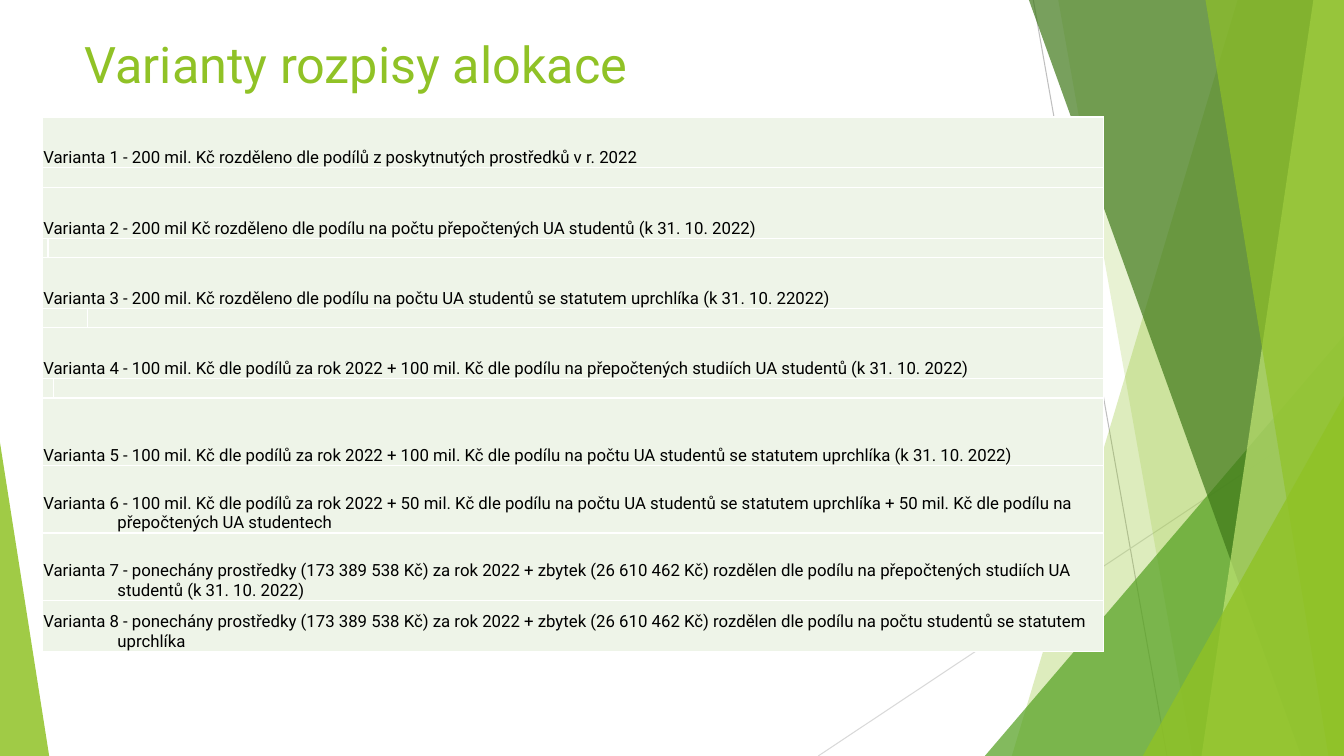
"""Build the slide listing the allocation variants."""
from dataclasses import dataclass

from lxml.etree import SubElement
from pptx import Presentation
from pptx.dml.color import RGBColor
from pptx.enum.shapes import MSO_CONNECTOR, MSO_SHAPE
from pptx.enum.text import MSO_ANCHOR
from pptx.oxml.ns import qn
from pptx.util import Cm, Pt

LIME = RGBColor(0x90, 0xC2, 0x26)
GREEN = RGBColor(0x54, 0xA0, 0x21)
DARK_GREEN = RGBColor(0x3F, 0x78, 0x19)
PALE_LIME = RGBColor(0xC0, 0xE4, 0x74)
CELL_GREEN = RGBColor(0xEE, 0xF4, 0xE8)
GREY = RGBColor(0xBF, 0xBF, 0xBF)
LIGHT_GREY = RGBColor(0xD9, 0xD9, 0xD9)
WHITE = RGBColor(0xFF, 0xFF, 0xFF)
BLACK = RGBColor(0, 0, 0)

TITLE_FORMAT = {"name": "Roboto", "size": Pt(36)}
CELL_FORMAT = {"name": "Roboto", "size": Pt(12)}
CELL_LAYOUT = {
    "vertical_anchor": MSO_ANCHOR.BOTTOM,
    "margin_left": Cm(0.02),
    "margin_right": Cm(0.02),
    "margin_top": Cm(0.02),
    "margin_bottom": 0,
}
COLUMN_WIDTHS = (0.12, 0.1, 0.86, 25.6)
TEXT_ROW, GAP_ROW, TALL_ROW = 1.28, 0.49, 1.7
CONTINUATION_INDENT = Cm(1.87)

# Each row: height, first columns of its merged cells, lines of text.
ROWS = (
    (TEXT_ROW, (0,), ("Varianta 1 - 200 mil. Kč rozděleno dle podílů z poskytnutých prostředků v r. 2022",)),
    (GAP_ROW, (0,), ()),
    (TEXT_ROW, (0,), ("Varianta 2 - 200 mil Kč rozděleno dle podílu na počtu přepočtených UA studentů (k 31. 10. 2022)",)),
    (GAP_ROW, (0, 1), ()),
    (TEXT_ROW, (0,), ("Varianta 3 - 200 mil. Kč rozděleno dle podílu na počtu UA studentů se statutem uprchlíka (k 31. 10. 22022)",)),
    (GAP_ROW, (0, 3), ()),
    (TEXT_ROW, (0,), ("Varianta 4 - 100 mil. Kč dle podílů za rok 2022 + 100 mil. Kč dle podílu na přepočtených studiích UA studentů (k 31. 10. 2022)",)),
    (GAP_ROW, (0, 2), ()),
    (TALL_ROW, (0,), ("Varianta 5 - 100 mil. Kč dle podílů za rok 2022 + 100 mil. Kč dle podílu na počtu UA studentů se statutem uprchlíka (k 31. 10. 2022)",)),
    (TALL_ROW, (0,), (
        "Varianta 6 - 100 mil. Kč dle podílů za rok 2022 + 50 mil. Kč dle podílu na počtu UA studentů se statutem uprchlíka + 50 mil. Kč dle podílu na",
        "přepočtených UA studentech")),
    (TALL_ROW, (0,), (
        "Varianta 7 - ponechány prostředky (173 389 538 Kč) za rok 2022 + zbytek (26 610 462 Kč) rozdělen dle podílu na přepočtených studiích UA",
        "studentů (k 31. 10. 2022)")),
    (TEXT_ROW, (0,), (
        "Varianta 8 - ponechány prostředky (173 389 538 Kč) za rok 2022 + zbytek (26 610 462 Kč) rozdělen dle podílu na počtu studentů se statutem",
        "uprchlíka")),
)


@dataclass
class Box:
    """Hold a region of the slide in centimetres."""
    left: float
    top: float
    width: float
    height: float

    @property
    def right(self):
        """Return the right edge."""
        return self.left + self.width

    @property
    def bottom(self):
        """Return the lower edge."""
        return self.top + self.height

    def lengths(self):
        """Return the position and size as slide lengths."""
        return Cm(self.left), Cm(self.top), Cm(self.width), Cm(self.height)


def apply_format(target, values):
    """Set each named attribute on the target."""
    for name, value in values.items():
        setattr(target, name, value)


def paint(shape, color, opacity):
    """Give a shape a translucent fill without line or shadow."""
    shape.shadow.inherit = False
    shape.line.fill.background()
    shape.fill.solid()
    shape.fill.fore_color.rgb = color
    color_element = shape._element.spPr.find(qn("a:solidFill"))[0]
    SubElement(color_element, qn("a:alpha"), val=str(opacity * 1000))


def add_ray(slide, start, end, color):
    """Draw a thin straight line between two points."""
    points = [Cm(value) for value in (*start, *end)]
    connector = slide.shapes.add_connector(MSO_CONNECTOR.STRAIGHT, *points)
    connector.line.color.rgb = color
    connector.line.width = Pt(0.75)
    SubElement(connector._element.spPr, qn("a:effectLst"))


def add_band(slide, box, top_inset, bottom_inset, color, opacity):
    """Draw a full-height band that ends at the right edge of the box."""
    corners = (
        (box.right - top_inset, box.top),
        (box.right, box.top),
        (box.right, box.bottom),
        (box.right - bottom_inset, box.bottom),
    )
    points = [(Cm(x), Cm(y)) for x, y in corners]
    builder = slide.shapes.build_freeform(*points[0])
    builder.add_line_segments(points[1:], close=True)
    paint(builder.convert_to_shape(), color, opacity)


def add_corner(slide, box, width, height, color, opacity, apex=1):
    """Draw a right triangle in a lower corner, with apex 0 left or 1 right."""
    left = box.left + apex * (box.width - width)
    area = Box(left, box.bottom - height, width, height)
    shape = slide.shapes.add_shape(MSO_SHAPE.ISOSCELES_TRIANGLE, *area.lengths())
    shape.adjustments[0] = apex
    paint(shape, color, opacity)


def add_backdrop(slide, box):
    """Draw the green facets and the two rays behind the content."""
    add_ray(slide, (box.right - 7.83, box.top), (box.right - 4.46, box.bottom), GREY)
    add_ray(slide, (box.right, box.top + 10.24), (box.right - 13.25, box.bottom), LIGHT_GREY)
    facets = (
        (add_band, 2.68, 8.37, LIME, 30),
        (add_band, 7.2, 3.82, LIME, 20),
        (add_corner, 9.05, 10.59, GREEN, 72),
        (add_band, 7.94, 1.08, DARK_GREEN, 70),
        (add_band, 0.77, 3.59, PALE_LIME, 70),
        (add_band, 3.49, 0.39, LIME, 65),
        (add_corner, 5.07, 9.07, LIME, 80),
        (add_corner, 1.24, 7.9, LIME, 85, 0),
    )
    for add_facet, *values in facets:
        add_facet(slide, box, *values)


def add_title(slide, box):
    """Write the slide title."""
    frame = slide.shapes.add_textbox(*box.lengths()).text_frame
    apply_format(frame, {"word_wrap": True, "vertical_anchor": MSO_ANCHOR.MIDDLE})
    run = frame.paragraphs[0].add_run()
    run.text = "Varianty rozpisy alokace"
    apply_format(run.font, TITLE_FORMAT)
    run.font.color.rgb = LIME


def style_cell(cell):
    """Give a cell its margins, white borders and pale fill."""
    apply_format(cell, CELL_LAYOUT)
    properties = cell._tc.get_or_add_tcPr()
    for side in ("lnL", "lnR", "lnT", "lnB"):
        border = SubElement(properties, qn(f"a:{side}"), w=str(Pt(1)))
        fill = SubElement(border, qn("a:solidFill"))
        SubElement(fill, qn("a:srgbClr"), val=str(WHITE))
    cell.fill.solid()
    cell.fill.fore_color.rgb = CELL_GREEN
    SubElement(cell.text_frame.paragraphs[0]._p, qn("a:endParaRPr"), sz="1000")


def write_lines(cell, lines):
    """Write the lines, indenting those after the first."""
    frame = cell.text_frame
    for index, line in enumerate(lines):
        paragraph = frame.add_paragraph() if index else frame.paragraphs[0]
        run = paragraph.add_run()
        run.text = line
        apply_format(run.font, CELL_FORMAT)
        run.font.color.rgb = BLACK
        if index:
            paragraph._p.get_or_add_pPr().set("marL", str(CONTINUATION_INDENT))


def add_variants(slide, box):
    """Draw the table of variants."""
    frame = slide.shapes.add_table(len(ROWS), len(COLUMN_WIDTHS), *box.lengths())
    table = frame.table
    apply_format(table, {"first_row": False, "horz_banding": False})
    for column, width in zip(table.columns, COLUMN_WIDTHS):
        column.width = Cm(width)
    for cell in table.iter_cells():
        style_cell(cell)
    for index, (height, starts, lines) in enumerate(ROWS):
        table.rows[index].height = Cm(height)
        for start, stop in zip(starts, (*starts[1:], len(COLUMN_WIDTHS))):
            if stop - start > 1:
                table.cell(index, start).merge(table.cell(index, stop - 1))
        write_lines(table.cell(index, 0), lines)


def main():
    """Build and save the presentation."""
    presentation = Presentation()
    page = Box(0, 0, 33.87, 19.05)
    apply_format(presentation, {"slide_width": Cm(page.width), "slide_height": Cm(page.height)})
    slide = presentation.slides.add_slide(presentation.slide_layouts[6])
    add_backdrop(slide, page)
    add_title(slide, Box(1.88, 0.56, 23.88, 2.08))
    add_variants(slide, Box(1.07, 2.95, sum(COLUMN_WIDTHS), sum(row[0] for row in ROWS)))
    presentation.save("out.pptx")


if __name__ == "__main__":
    main()
